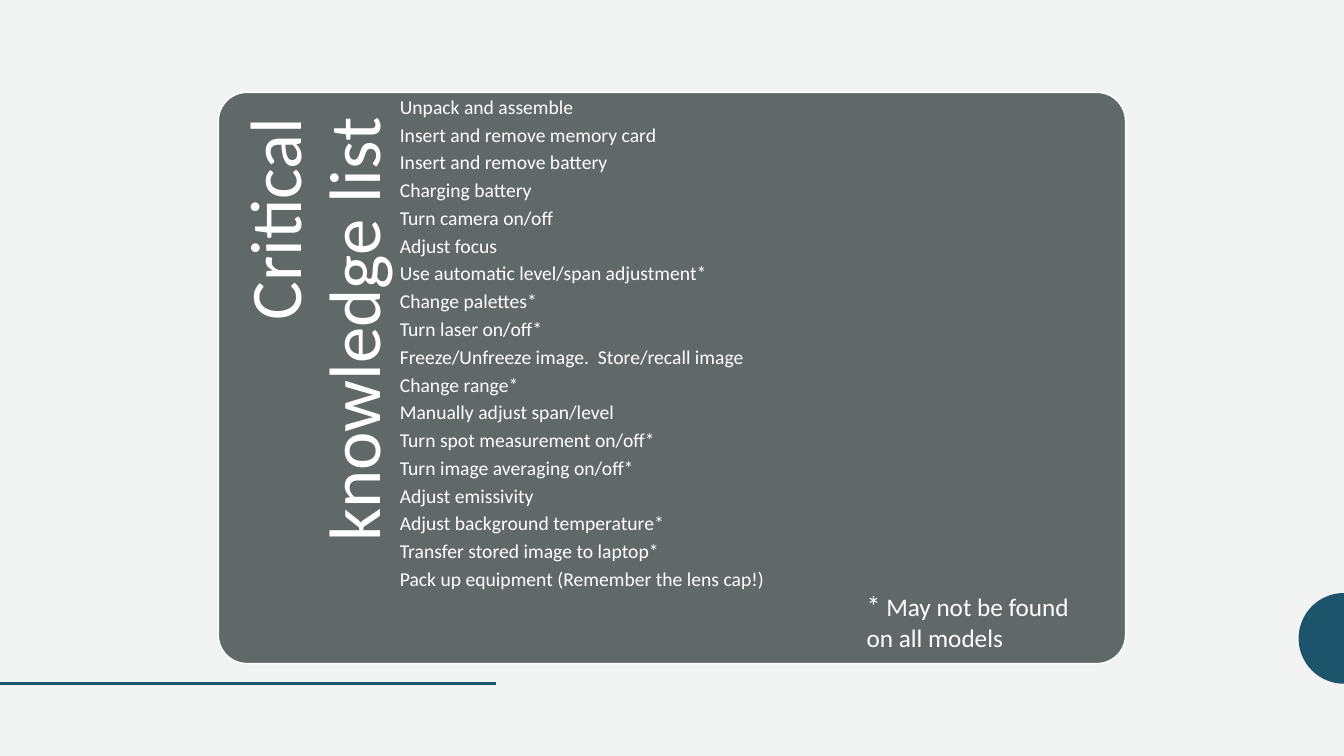
"""Build the critical knowledge list slide for thermal camera training."""
import math
from dataclasses import dataclass

import pptx
import pptx.dml.color
import pptx.enum.shapes
import pptx.enum.text
import pptx.util
from lxml import etree

TITLE = "Critical knowledge list"
SKILLS = [
    "Unpack and assemble",
    "Insert and remove memory card",
    "Insert and remove battery",
    "Charging battery",
    "Turn camera on/off",
    "Adjust focus",
    "Use automatic level/span adjustment*",
    "Change palettes*",
    "Turn laser on/off*",
    "Freeze/Unfreeze image.  Store/recall image",
    "Change range*",
    "Manually adjust span/level",
    "Turn spot measurement on/off*",
    "Turn image averaging on/off*",
    "Adjust emissivity",
    "Adjust background temperature*",
    "Transfer stored image to laptop*",
    "Pack up equipment (Remember the lens cap!)",
]
FOOTNOTE_MARK = "*"
FOOTNOTE = " May not be found on all models"

COLUMNS, ROWS = 16, 9
PANEL = (2.6, 1.1, 10.8, 6.8)
TITLE_LENGTH, TITLE_DEPTH = 5.58, 2.16
LIST_WIDTH = 8.05
NOTE = (10.2, 6.95, 3, 0.89)
RULE_LENGTH, RULE_ROW = 5.9, 8.14
DISC_ROW, DISC_RADIUS, DISC_STEPS = 7.6, 0.54, 48


@dataclass(frozen=True)
class Theme:
    paper: str = "F2F3F3"
    accent: str = "1C546B"
    panel: str = "606968"
    light: str = "FFFFFF"
    font: str = "Calibri"
    title_size: float = 52
    list_size: float = 14
    mark_size: float = 20
    note_size: float = 18


THEME = Theme()


def color(code):
    return pptx.dml.color.RGBColor.from_string(code)


def cells(*counts):
    """Turn grid counts into lengths."""
    return [pptx.util.Inches(count * 7.5 / ROWS) for count in counts]


def paint(shape, fill, line=None):
    shape.shadow.inherit = False
    shape.fill.solid()
    shape.fill.fore_color.rgb = color(fill)
    if line:
        shape.line.color.rgb = color(line)
        shape.line.width = pptx.util.Pt(1)
    else:
        shape.line.fill.background()


def set_frame(frame, left, top, right, bottom):
    frame.word_wrap = True
    frame.auto_size = pptx.enum.text.MSO_AUTO_SIZE.NONE
    frame.vertical_anchor = pptx.enum.text.MSO_ANCHOR.TOP
    frame.margin_left, frame.margin_top, frame.margin_right, frame.margin_bottom = (
        pptx.util.Inches(inset) for inset in (left, top, right, bottom))


def style(font, size):
    font.name = THEME.font
    font.size = pptx.util.Pt(size)
    font.color.rgb = color(THEME.light)


def add_decoration(page):
    points = []
    for step in range(DISC_STEPS + 1):
        angle = math.pi * (0.5 + step / DISC_STEPS)
        points.append(cells(COLUMNS + DISC_RADIUS * math.cos(angle),
                            DISC_ROW + DISC_RADIUS * math.sin(angle)))
    builder = page.shapes.build_freeform(*points[0])
    builder.add_line_segments(points[1:], close=True)
    paint(builder.convert_to_shape(), THEME.accent)

    rule = page.shapes.add_connector(
        pptx.enum.shapes.MSO_CONNECTOR.STRAIGHT, *cells(0, RULE_ROW, RULE_LENGTH, RULE_ROW))
    rule.line.color.rgb = color(THEME.accent)
    rule.line.width = pptx.util.Pt(2)
    etree.SubElement(rule.element.spPr, pptx.oxml.ns.qn("a:effectLst"))


def add_panel(page):
    panel = page.shapes.add_shape(
        pptx.enum.shapes.MSO_SHAPE.ROUNDED_RECTANGLE, *cells(*PANEL))
    panel.adjustments[0] = 0.05
    paint(panel, THEME.panel, THEME.light)
    return panel


def place_title(page, panel):
    title = page.shapes.title
    panel.element.addnext(title.element)
    left, top = PANEL[:2]
    offset = (TITLE_LENGTH - TITLE_DEPTH) / 2
    title.left, title.top, title.width, title.height = cells(
        left - offset, top + offset, TITLE_LENGTH, TITLE_DEPTH)
    title.rotation = 270
    set_frame(title.text_frame, 0, 0.2, 0.25, 0)
    title.text_frame.text = TITLE
    para = title.text_frame.paragraphs[0]
    para.alignment = pptx.enum.text.PP_ALIGN.RIGHT
    para.line_spacing = 0.9
    style(para.font, THEME.title_size)


def add_skills(page):
    left, top, _, height = PANEL
    box = page.shapes.add_textbox(*cells(left + TITLE_DEPTH, top, LIST_WIDTH, height))
    set_frame(box.text_frame, 0, 0.05, 0, 0)
    box.text_frame.text = "\n".join(SKILLS)
    for para in box.text_frame.paragraphs:
        para.line_spacing = 0.9
        para.space_after = pptx.util.Pt(4.7)
        style(para.font, THEME.list_size)


def add_footnote(page):
    note = page.shapes.add_shape(pptx.enum.shapes.MSO_SHAPE.RECTANGLE, *cells(*NOTE))
    paint(note, THEME.panel)
    set_frame(note.text_frame, 0.1, 0.05, 0.1, 0.05)
    para = note.text_frame.paragraphs[0]
    para.alignment = pptx.enum.text.PP_ALIGN.LEFT
    for text, size in ((FOOTNOTE_MARK, THEME.mark_size), (FOOTNOTE, THEME.note_size)):
        span = para.add_run()
        span.text = text
        style(span.font, size)


def main():
    deck = pptx.Presentation()
    deck.slide_width, deck.slide_height = cells(COLUMNS, ROWS)
    page = deck.slides.add_slide(deck.slide_layouts.get_by_name("Title Only"))
    page.background.fill.solid()
    page.background.fill.fore_color.rgb = color(THEME.paper)
    add_decoration(page)
    place_title(page, add_panel(page))
    add_skills(page)
    add_footnote(page)
    deck.save("out.pptx")


if __name__ == "__main__":
    main()
